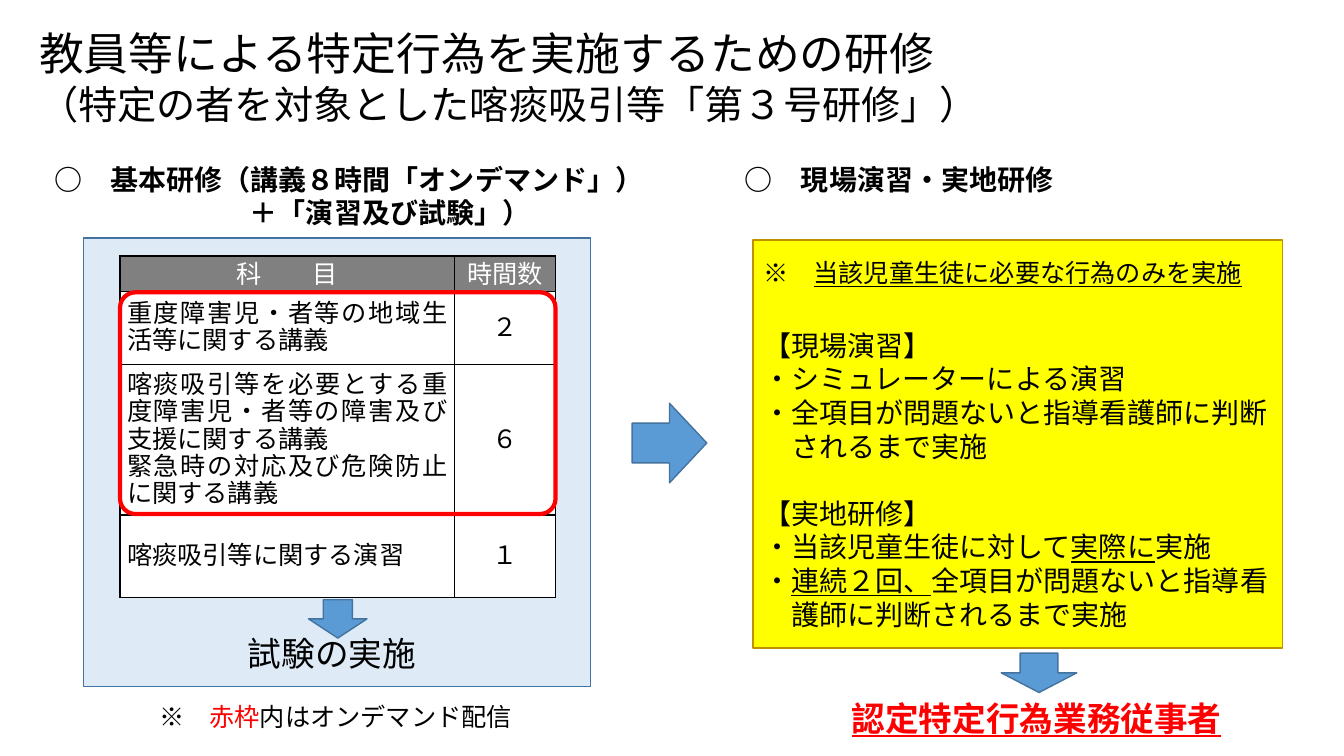
from typing import NamedTuple, Optional

from lxml.etree import SubElement
from pptx import Presentation
from pptx.dml.color import RGBColor
from pptx.enum.shapes import MSO_SHAPE as Shape
from pptx.enum.text import MSO_ANCHOR as Anchor, MSO_AUTO_SIZE as AutoSize, PP_ALIGN as Align
from pptx.oxml.ns import qn
from pptx.util import Inches, Pt

SANS = "Noto Sans CJK JP"
BLACK, WHITE, RED = "000000", "FFFFFF", "FF0000"
TABLE_SPACING = 0.75


class Span(NamedTuple):
    text: str
    underline: bool = False
    color: Optional[str] = None


class Line(NamedTuple):
    spans: list[Span]
    size: float = 20
    before: float = 0
    indent: float = 0


class Frame(NamedTuple):
    left: float
    top: float
    width: float
    height: float


class Arrow(NamedTuple):
    frame: Frame
    rotation: float = 0


class Subject(NamedTuple):
    paragraphs: list[str]
    hours: str
    height: float


def rgb(color: str) -> RGBColor:
    return RGBColor.from_string(color)


def lengths(frame: Frame) -> list[int]:
    return [Inches(value) for value in frame]


def plain(text: str, size: float = 20, before: float = 0, indent: float = 0) -> Line:
    return Line([Span(text)], size, before, indent)


def write(text_frame, lines: list[Line], *, color: str = BLACK, bold: bool = False,
          font: str = SANS, align: Align = Align.LEFT, spacing: float = 1.0) -> None:
    for index, line in enumerate(lines):
        para = text_frame.paragraphs[0] if index == 0 else text_frame.add_paragraph()
        para.alignment = align
        para.line_spacing = spacing
        if line.before:
            para.space_before = Pt(line.before)
        if line.indent:
            properties = para._p.get_or_add_pPr()
            properties.set("marL", str(Inches(line.indent)))
            properties.set("indent", "0")
        for span in line.spans:
            run = para.add_run()
            run.text = span.text
            run.font.size = Pt(line.size)
            run.font.bold = bold
            run.font.underline = span.underline
            run.font.name = font
            run.font.color.rgb = rgb(span.color or color)
            if font == SANS:
                SubElement(run._r.get_or_add_rPr(), qn("a:ea"), typeface=font)


def add_text(page, frame: Frame, lines: list[Line], *, wrap: bool = True, **style) -> None:
    box = page.shapes.add_textbox(*lengths(frame))
    box.text_frame.word_wrap = wrap
    box.text_frame.auto_size = AutoSize.SHAPE_TO_FIT_TEXT
    write(box.text_frame, lines, **style)


def add_box(page, kind: Shape, frame: Frame, *, fill: Optional[str] = None,
            line: str = "43739E", width: float = 1):
    box = page.shapes.add_shape(kind, *lengths(frame))
    box.shadow.inherit = False
    if fill:
        box.fill.solid()
        box.fill.fore_color.rgb = rgb(fill)
    else:
        box.fill.background()
    box.line.color.rgb = rgb(line)
    box.line.width = Pt(width)
    return box


def add_arrow(page, arrow: Arrow) -> None:
    shape = add_box(page, Shape.RIGHT_ARROW, arrow.frame, fill="5B9BD5")
    shape.rotation = arrow.rotation


def fill_cell(cell, paragraphs: list[str], *, fill: str, color: str,
              align: Align, top: float) -> None:
    cell.margin_left = cell.margin_right = Inches(0.07)
    cell.margin_top, cell.margin_bottom = Inches(top), 0
    cell.vertical_anchor = Anchor.MIDDLE
    write(cell.text_frame, [plain(text, 18) for text in paragraphs], color=color,
          align=align, spacing=TABLE_SPACING)
    properties = cell._tc.get_or_add_tcPr()
    for side in ("lnL", "lnR", "lnT", "lnB"):
        border = SubElement(properties, qn(f"a:{side}"), w=str(Pt(1)))
        SubElement(SubElement(border, qn("a:solidFill")), qn("a:srgbClr"), val=BLACK)
    cell.fill.solid()
    cell.fill.fore_color.rgb = rgb(fill)


def add_subjects(page, frame: Frame, subjects: list[Subject]) -> None:
    table = page.shapes.add_table(len(subjects), 2, *lengths(frame)).table
    table.first_row = table.horz_banding = False
    for column, width in zip(table.columns, (3.32, 1)):
        column.width = Inches(width)
    for index, subject in enumerate(subjects):
        header = index == 0
        table.rows[index].height = Inches(subject.height)
        for column, paragraphs in enumerate((subject.paragraphs, [subject.hours])):
            fill_cell(table.cell(index, column), paragraphs,
                      fill="808080" if header else WHITE,
                      color=WHITE if header else BLACK,
                      align=Align.CENTER if header or column else Align.JUSTIFY,
                      top=0.04 if header else 0)


SUBJECTS = [
    Subject(["科　　目"], "時間数", 0.35),
    Subject(["重度障害児・者等の地域生活等に関する講義"], "２", 0.73),
    Subject(["喀痰吸引等を必要とする重度障害児・者等の障害及び支援に関する講義",
             "緊急時の対応及び危険防止に関する講義"], "６", 1.49),
    Subject(["喀痰吸引等に関する演習"], "１", 0.82),
]
PRACTICE = [
    Line([Span("※　"), Span("当該児童生徒に必要な行為のみを実施", True)], 18),
    plain("【現場演習】", before=29),
    plain("・シミュレーターによる演習"),
    plain("・全項目が問題ないと指導看護師に判断"),
    plain("されるまで実施", indent=0.28),
    plain("【実地研修】", before=24),
    Line([Span("・当該児童生徒に対して"), Span("実際に", True), Span("実施")]),
    Line([Span("・"), Span("連続２回、", True), Span("全項目が問題ないと指導看")]),
    plain("護師に判断されるまで実施", indent=0.28),
]
ARROWS = [
    Arrow(Frame(3.16, 5.85, 0.38, 0.58), 90),
    Arrow(Frame(6.27, 4, 0.74, 0.79)),
    Arrow(Frame(10.11, 6.3, 0.39, 0.75), 90),
]


def main() -> None:
    deck = Presentation()
    deck.slide_width, deck.slide_height = Inches(13.33), Inches(7.5)
    page = deck.slides.add_slide(deck.slide_layouts[6])

    add_box(page, Shape.RECTANGLE, Frame(0.83, 2.36, 5.03, 4.45), fill="DEEBF7")
    add_text(page, Frame(0.29, 0.21, 12.01, 1.11),
             [plain("教員等による特定行為を実施するための研修", 32),
              plain("（特定の者を対象とした喀痰吸引等「第３号研修」）", 28)])
    add_subjects(page, Frame(1.19, 2.54, 4.32, 3.39), SUBJECTS)
    add_text(page, Frame(0.44, 1.56, 6.13, 0.77),
             [plain("○　基本研修（講義８時間「オンデマンド」）"),
              plain("＋「演習及び試験」）", indent=1.94)], bold=True)
    add_text(page, Frame(7.29, 1.56, 5.5, 0.44), [plain("○　現場演習・実地研修")], bold=True)

    practice = add_box(page, Shape.RECTANGLE, Frame(7.47, 2.38, 5.25, 4.05),
                       fill="FFFF00", line="BF9000")
    practice.text_frame.word_wrap = True
    practice.text_frame.vertical_anchor = Anchor.MIDDLE
    write(practice.text_frame, PRACTICE, align=Align.JUSTIFY)

    for arrow in ARROWS:
        add_arrow(page, arrow)
    add_text(page, Frame(2.36, 6.23, 2.28, 0.5), [plain("試験の実施", 24)])
    add_text(page, Frame(8.35, 6.87, 3.9, 0.5),
             [Line([Span("認定特定行為業務従事者", True)], 24)],
             wrap=False, color=RED, bold=True)

    on_demand = add_box(page, Shape.ROUNDED_RECTANGLE, Frame(1.19, 2.9, 4.32, 2.2),
                        line=RED, width=3)
    on_demand.adjustments[0] = 0.07
    add_text(page, Frame(1.48, 6.91, 3.74, 0.4),
             [Line([Span("※　"), Span("赤枠", color=RED), Span("内はオンデマンド配信")], 18)],
             wrap=False, font="Calibri")

    deck.save("out.pptx")


if __name__ == "__main__":
    main()
